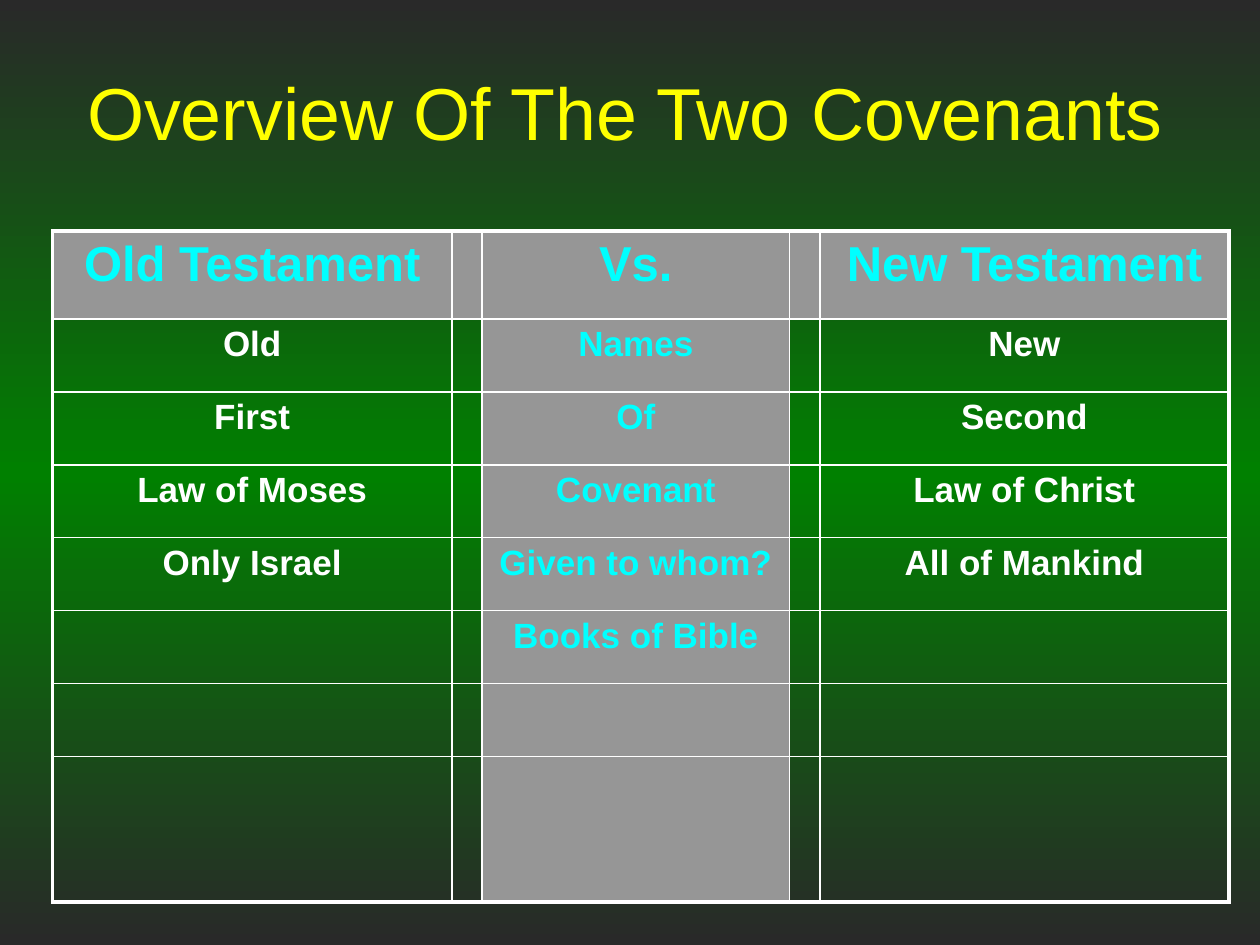
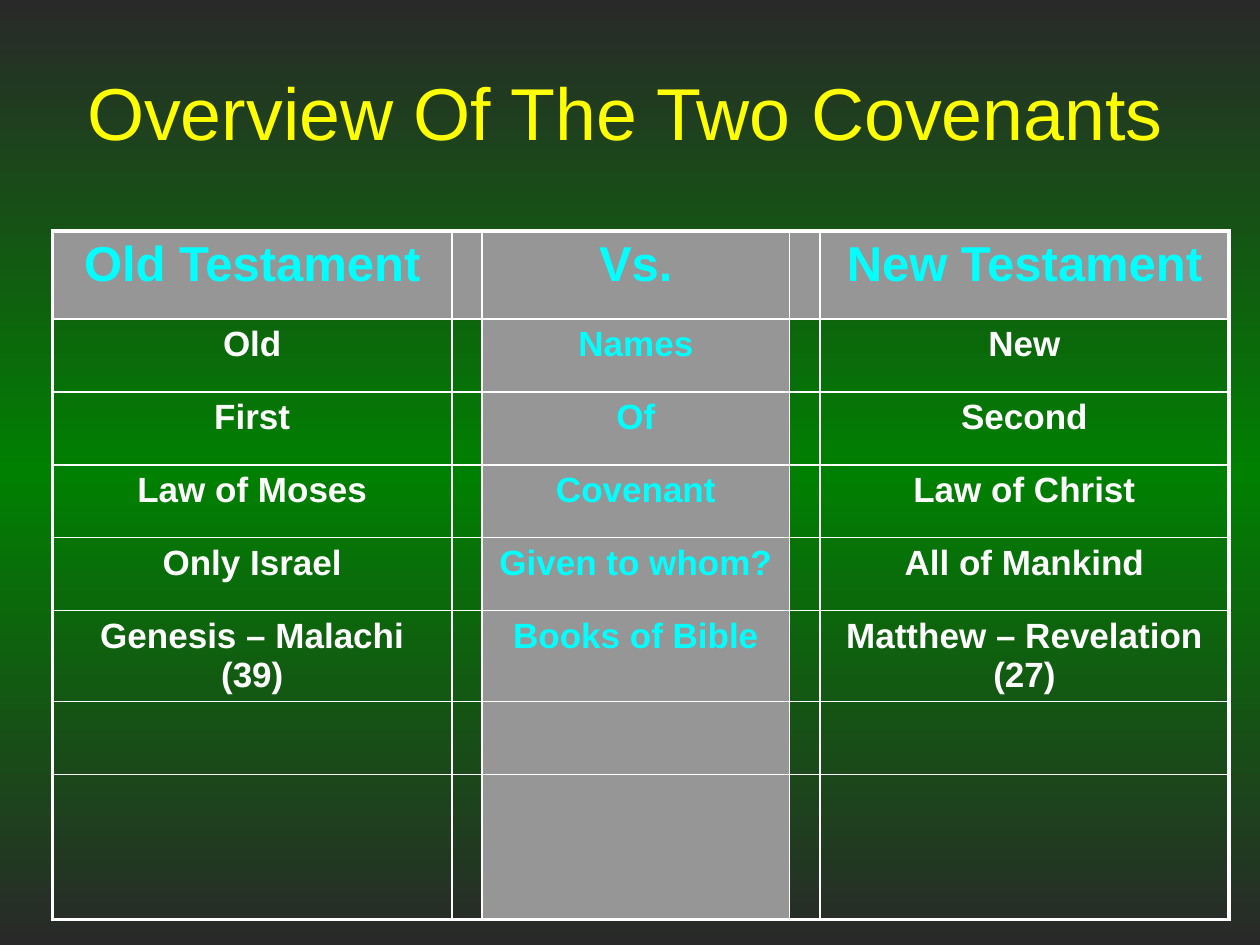
import pptx
import pptx.dml.color
import pptx.enum.text
import pptx.oxml.ns
import pptx.util
from lxml import etree

Cm = pptx.util.Cm
Pt = pptx.util.Pt
qn = pptx.oxml.ns.qn

FONT = "Arial"
DARK, GREEN, GRAY = "292929", "008000", "969696"
YELLOW, CYAN, WHITE = "FFFF00", "00FFFF", "FFFFFF"

TITLE = "Overview Of The Two Covenants "
COLUMN_WIDTHS = [8.05, 0.58, 6.2, 0.58, 8.25]
ROW_HEIGHTS = [1.77] + [1.47] * 6 + [2.93]
TEXT_COLUMNS = [0, 2, 4]
LABEL_COLUMN = 2
OUTER_LINE, INNER_LINE = 2.25, 1

COMPARISON = [
    ("Old Testament", "Vs.", "New Testament"),
    ("Old", "Names", "New"),
    ("First", "Of", "Second"),
    ("Law of Moses", "Covenant", "Law of Christ"),
    ("Only Israel", "Given to whom?", "All of Mankind"),
]
BOOKS_HIDDEN = ("", "Books of Bible", "")
BOOKS_SHOWN = ("Genesis – Malachi (39)", "Books of Bible", "Matthew – Revelation (27)")


def rgb(color):
    return pptx.dml.color.RGBColor.from_string(color)


def set_background(master):
    """Give every slide a vertical dark-green-dark gradient."""
    fill = master.background.fill
    fill.gradient()
    fill.gradient_angle = 270
    stops = master.element.find(".//" + qn("a:gsLst"))
    for stop in list(stops):
        stops.remove(stop)
    for percent, color in [(0, DARK), (50, GREEN), (100, DARK)]:
        stop = etree.SubElement(stops, qn("a:gs"), pos=str(percent * 1000))
        etree.SubElement(stop, qn("a:srgbClr"), val=color)


def place_title(layout):
    title = layout.placeholders[0]
    title.left, title.top = Cm(0.64), Cm(0.64)
    title.width, title.height = Cm(24.33), Cm(3.18)
    title.text_frame.vertical_anchor = pptx.enum.text.MSO_ANCHOR.MIDDLE


def write(para, text, size, color, bold=False):
    para.alignment = pptx.enum.text.PP_ALIGN.CENTER
    span = para.add_run()
    span.text = text
    span.font.name = FONT
    span.font.size = Pt(size)
    span.font.bold = bold
    span.font.color.rgb = rgb(color)


def set_borders(cell, on_edge):
    """Draw the four sides, thicker where on_edge says the side is outer."""
    properties = cell._tc.get_or_add_tcPr()
    for side in ("L", "R", "T", "B"):
        width = OUTER_LINE if on_edge[side] else INNER_LINE
        line = etree.SubElement(properties, qn("a:ln" + side), w=str(Pt(width)))
        fill = etree.SubElement(line, qn("a:solidFill"))
        etree.SubElement(fill, qn("a:srgbClr"), val=WHITE)


def style_cell(cell, row, column):
    set_borders(cell, {
        "L": column == 0,
        "R": column == len(COLUMN_WIDTHS) - 1,
        "T": row == 0,
        "B": row == len(ROW_HEIGHTS) - 1,
    })
    if row == 0 or column == LABEL_COLUMN:
        cell.fill.solid()
        cell.fill.fore_color.rgb = rgb(GRAY)
    else:
        cell.fill.background()


def add_comparison_table(page, entries):
    frame = page.shapes.add_table(
        len(ROW_HEIGHTS), len(COLUMN_WIDTHS), Cm(1.06), Cm(4.66),
        Cm(sum(COLUMN_WIDTHS)), Cm(sum(ROW_HEIGHTS)))
    table = frame.table
    table.first_row = table.horz_banding = False
    for column, width in zip(table.columns, COLUMN_WIDTHS):
        column.width = Cm(width)
    for row, height in zip(table.rows, ROW_HEIGHTS):
        row.height = Cm(height)
    for row in range(len(ROW_HEIGHTS)):
        for column in range(len(COLUMN_WIDTHS)):
            style_cell(table.cell(row, column), row, column)
    for row, texts in enumerate(entries):
        for column, text in zip(TEXT_COLUMNS, texts):
            if text:
                highlighted = row == 0 or column == LABEL_COLUMN
                write(table.cell(row, column).text_frame.paragraphs[0], text,
                      28 if row == 0 else 20, CYAN if highlighted else WHITE, bold=True)


def add_page(deck, layout, books):
    page = deck.slides.add_slide(layout)
    write(page.shapes.title.text_frame.paragraphs[0], TITLE, 42, YELLOW)
    add_comparison_table(page, COMPARISON + [books])


def main():
    deck = pptx.Presentation()
    deck.slide_width, deck.slide_height = Cm(25.4), Cm(19.05)
    set_background(deck.slide_master)
    layout = deck.slide_layouts.get_by_name("Title Only")
    place_title(layout)
    for books in (BOOKS_HIDDEN, BOOKS_SHOWN):
        add_page(deck, layout, books)
    deck.save("out.pptx")


if __name__ == "__main__":
    main()
